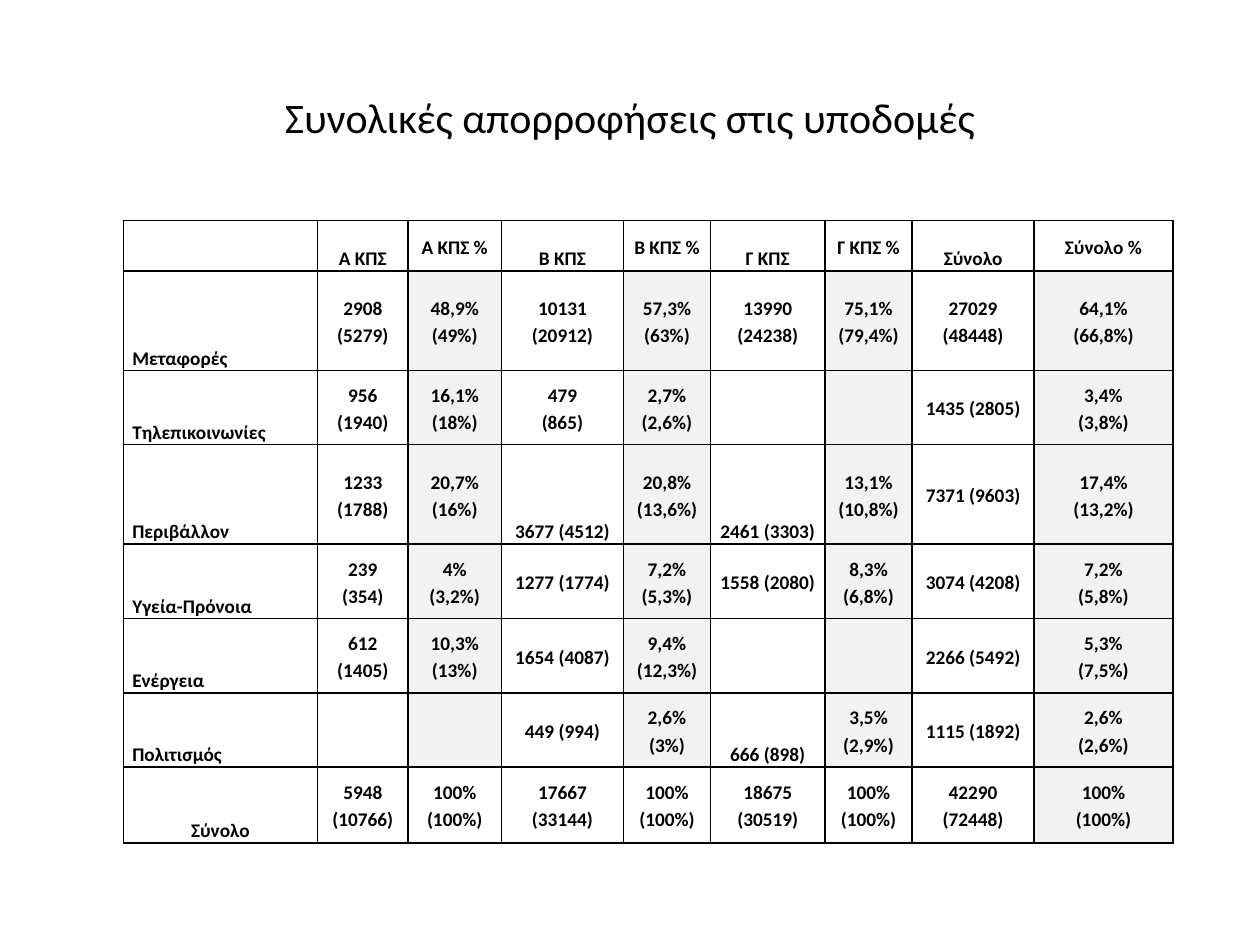
from lxml import etree
from pptx import Presentation, util as u
from pptx.dml.color import RGBColor
from pptx.enum import text
from pptx.oxml.ns import qn

BLACK = RGBColor(0x00, 0x00, 0x00)
WHITE = RGBColor(0xFF, 0xFF, 0xFF)
LIGHT_GREY = RGBColor(0xF2, 0xF2, 0xF2)
FONT = "Calibri"

COLUMN_WIDTHS = [1.54, 0.72, 0.74, 0.97, 0.69, 0.91, 0.69, 0.97, 1.1]
ROW_HEIGHTS = [0.4, 0.79, 0.59, 0.79, 0.59, 0.59, 0.59, 0.6]

# One string per row: "|" parts the cells, "/" parts the paragraphs of a cell
ROWS = [
    "|Α ΚΠΣ|Α ΚΠΣ %|Β ΚΠΣ|Β ΚΠΣ %|Γ ΚΠΣ|Γ ΚΠΣ %|Σύνολο|Σύνολο %",
    "Μεταφορές|2908 (5279)|48,9%/(49%)|10131 (20912)|57,3%/(63%)"
    "|13990 (24238)|75,1%/(79,4%)|27029 (48448)|64,1%/(66,8%)",
    "Τηλεπικοινωνίες|956 (1940)|16,1%/(18%)|479/(865)|2,7%/(2,6%)"
    "|||1435 (2805)|3,4%/(3,8%)",
    "Περιβάλλον|1233 (1788)|20,7%/(16%)|3677 (4512)|20,8%/(13,6%)"
    "|2461 (3303)|13,1%/(10,8%)|7371 (9603)|17,4%/(13,2%)",
    "Υγεία-Πρόνοια|239 (354)|4%/(3,2%)|1277 (1774)|7,2%/(5,3%)"
    "|1558 (2080)|8,3%/(6,8%)|3074 (4208)|7,2%/(5,8%)",
    "Ενέργεια|612 (1405)|10,3%/(13%)|1654 (4087)|9,4%/(12,3%)"
    "|||2266 (5492)|5,3%/(7,5%)",
    "Πολιτισμός|||449 (994)|2,6%/(3%)|666 (898)|3,5%/(2,9%)"
    "|1115 (1892)|2,6%/(2,6%)",
    "Σύνολο|5948 (10766)|100%/(100%)|17667 (33144)|100%/(100%)"
    "|18675 (30519)|100%/(100%)|42290 (72448)|100%/(100%)",
]
LAST_ROW = len(ROWS) - 1
LAST_COLUMN = len(COLUMN_WIDTHS) - 1
BOTTOM_VALUES = {(3, 3), (3, 5), (6, 5)}


def style_paragraph(paragraph, size, bold, alignment):
    paragraph.alignment = alignment
    paragraph.font.name = FONT
    paragraph.font.size = u.Pt(size)
    paragraph.font.bold = bold
    paragraph.font.color.rgb = BLACK


def add_title(slide, left, top, width, height):
    shape = slide.shapes.add_textbox(left, top, width, height)
    frame = shape.text_frame
    frame.word_wrap = True
    frame.vertical_anchor = text.MSO_ANCHOR.MIDDLE
    frame.text = "Συνολικές απορροφήσεις στις υποδομές"
    style_paragraph(frame.paragraphs[0], 24, False, text.PP_ALIGN.CENTER)


def add_borders(cell):
    properties = cell._tc.get_or_add_tcPr()
    for side in ("a:lnL", "a:lnR", "a:lnT", "a:lnB"):
        line = etree.SubElement(properties, qn(side), w=str(u.Pt(1)))
        fill = etree.SubElement(line, qn("a:solidFill"))
        etree.SubElement(fill, qn("a:srgbClr"), val=str(BLACK))


def fill_cell(cell, content, row, column):
    is_percent = column > 0 and column % 2 == 0
    is_label = column == 0 and row < LAST_ROW
    at_bottom = (column == 0 or (row == 0 and not is_percent)
                 or (row, column) in BOTTOM_VALUES)
    shaded = is_percent and row > 0 and (row < LAST_ROW or column == LAST_COLUMN)

    cell.margin_left = cell.margin_right = u.Inches(0.07)
    cell.margin_top = cell.margin_bottom = 0
    cell.vertical_anchor = (text.MSO_ANCHOR.BOTTOM if at_bottom
                            else text.MSO_ANCHOR.MIDDLE)
    add_borders(cell)
    cell.fill.solid()
    cell.fill.fore_color.rgb = LIGHT_GREY if shaded else WHITE

    cell.text = content.replace("/", "\n")
    alignment = text.PP_ALIGN.LEFT if is_label else text.PP_ALIGN.CENTER
    for paragraph in cell.text_frame.paragraphs:
        style_paragraph(paragraph, 11, True, alignment)
        paragraph.line_spacing = 1.15


def add_absorption_table(slide, left, top, width, height):
    table = slide.shapes.add_table(len(ROWS), len(COLUMN_WIDTHS),
                                   left, top, width, height).table
    table.first_row = table.horz_banding = False
    for column, column_width in zip(table.columns, COLUMN_WIDTHS):
        column.width = u.Inches(column_width)
    for row, row_height in zip(table.rows, ROW_HEIGHTS):
        row.height = u.Inches(row_height)
    for row_index, line in enumerate(ROWS):
        for column_index, content in enumerate(line.split("|")):
            fill_cell(table.cell(row_index, column_index), content,
                      row_index, column_index)


def main():
    presentation = Presentation()
    presentation.slide_width = u.Inches(10)
    presentation.slide_height = u.Inches(7.5)
    slide = presentation.slides.add_slide(presentation.slide_layouts[6])
    # Heading
    add_title(slide, u.Inches(0.5), u.Inches(0.3), u.Inches(9), u.Inches(1.25))
    # Absorption by sector and support framework
    add_absorption_table(slide, u.Inches(0.98), u.Inches(1.75),
                         u.Inches(8.35), u.Inches(4.95))
    presentation.save("out.pptx")


if __name__ == "__main__":
    main()
